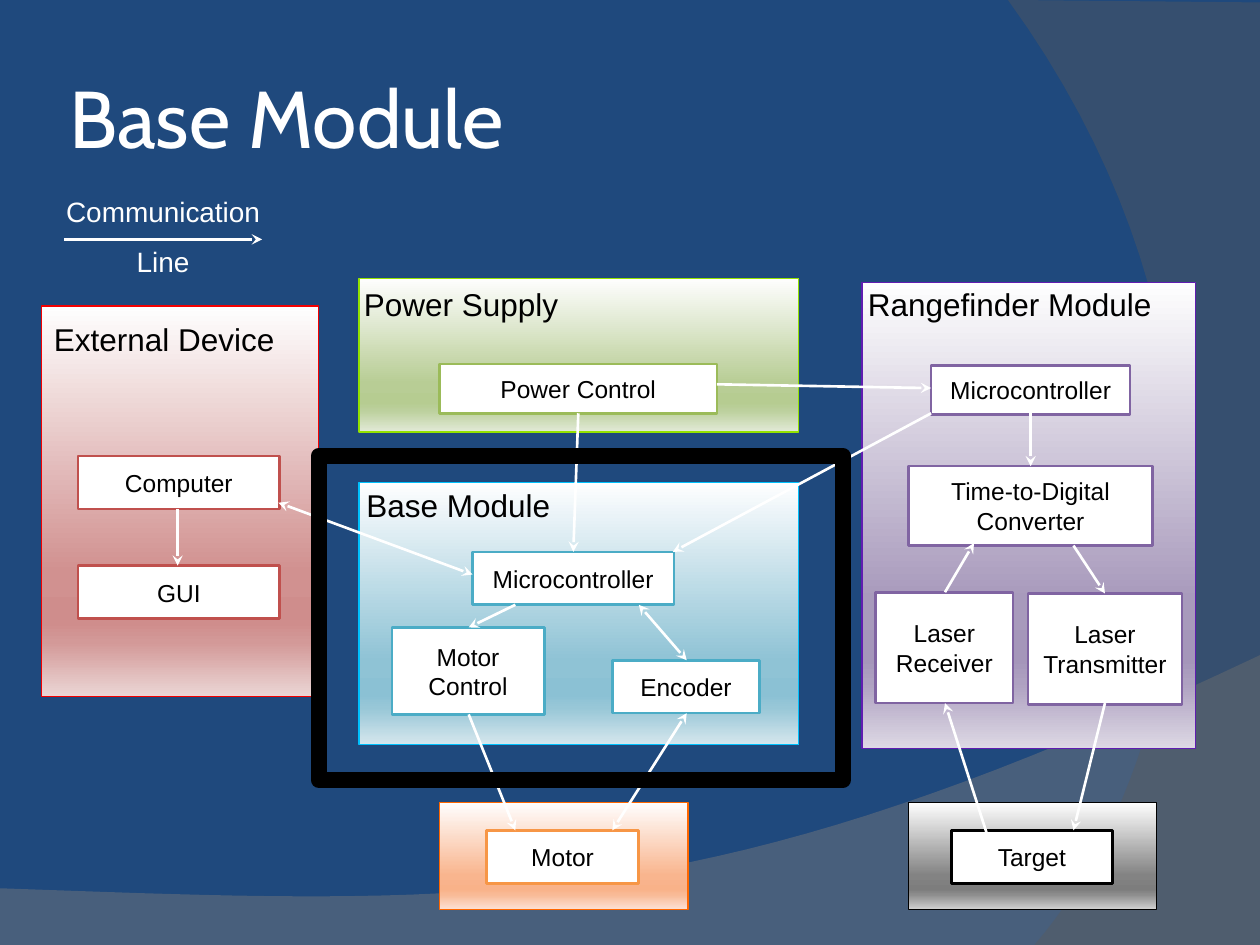
from lxml import etree
from pptx import Presentation
from pptx.dml.color import RGBColor
from pptx.enum import shapes, text
from pptx.oxml import ns
from pptx.util import Inches, Pt

COLORS = {
    "navy": "1F497D", "white": "FFFFFF", "black": "000000",
    "wave": "7B7B7B", "arc": "5A5A5A",
}
STOPS = (0, 68, 81, 86, 100)
# Per theme: panel line, box line, gradient colours at STOPS
THEMES = {
    "red": ("F30000", "C0504D", "FEFEFE D19190 CF8D8C D39998 EBD6D5"),
    "green": ("94E200", "9BBB59", "FEFEFE B8CD95 B6CC91 BCD09D E2EAD7"),
    "blue": ("00C1FD", "4BACC6", "FEFEFF 8FC3D5 8BC1D4 98C7D7 D5E6ED"),
    "purple": ("601DB1", "8064A2", "FEFEFE A89ABC A596BA AEA1C1 DDD8E4"),
    "orange": ("FF6700", "F79646", "FFFEFE F9B58E F9B289 F9BA96 FCE1D5"),
    "gray": ("000000", "000000", "FEFEFE 838383 7D7D7D 8D8D8D D2D2D2"),
}
# Panel: theme, box, title, title offset, parts (label, box within the panel)
PANELS = [
    ("purple", (6.84, 2.24, 2.65, 3.7), "Rangefinder Module", (-0.05, -0.03), [
        ("Microcontroller", (0.55, 0.66, 1.58, 0.39)),
        ("Time-to-Digital\nConverter", (0.37, 1.46, 1.94, 0.63)),
        ("Laser\nReceiver", (0.11, 2.46, 1.09, 0.88)),
        ("Laser\nTransmitter", (1.32, 2.47, 1.22, 0.88))]),
    ("orange", (3.49, 6.37, 1.97, 0.85), None, None,
     [("Motor", (0.37, 0.22, 1.21, 0.42))]),
    ("gray", (7.21, 6.37, 1.97, 0.85), None, None,
     [("Target", (0.34, 0.22, 1.28, 0.42))]),
    ("red", (0.33, 2.43, 2.2, 3.1), "External Device", (0, 0.06), [
        ("Computer", (0.29, 1.19, 1.6, 0.42)),
        ("GUI", (0.29, 2.06, 1.6, 0.42))]),
    ("green", (2.85, 2.21, 3.49, 1.22), "Power Supply", (-0.06, 0),
     [("Power Control", (0.64, 0.68, 2.2, 0.39))]),
    ("blue", (2.85, 3.83, 3.49, 2.08), "Base Module", (-0.04, -0.02), [
        ("Microcontroller", (0.9, 0.55, 1.6, 0.42)),
        ("Motor\nControl", (0.26, 1.15, 1.21, 0.69)),
        ("Encoder", (2.01, 1.41, 1.17, 0.42))]),
]
ONE_WAY = [
    (0.51, 1.9, 2.08, 1.9), (1.41, 4.04, 1.41, 4.49), (4.59, 3.28, 4.55, 4.38),
    (4.09, 4.8, 3.72, 4.98), (3.72, 5.67, 4.09, 6.59), (5.69, 3.05, 7.39, 3.08),
    (8.18, 3.25, 8.18, 3.7), (7.5, 4.7, 7.73, 4.31), (8.52, 4.33, 8.77, 4.71),
    (8.77, 5.58, 8.52, 6.59), (7.83, 6.61, 7.5, 5.58), (7.39, 3.28, 5.34, 4.38),
]
TWO_WAY = [(2.21, 3.99, 3.75, 4.56), (5.07, 4.8, 5.45, 5.24),
           (5.45, 5.66, 4.86, 6.59)]


def rgb(value):
    return RGBColor.from_string(COLORS.get(value, value))


def sub(parent, tag, **attrs):
    return etree.SubElement(parent, ns.qn(tag), attrs)


def write(shape, content, size=14, color="black", font="Arial", align="CENTER",
          anchor="TOP", inset=0.1, spacing=None):
    tf = shape.text_frame
    tf.word_wrap = True
    tf.vertical_anchor = getattr(text.MSO_ANCHOR, anchor)
    tf.margin_left = tf.margin_right = Inches(inset)
    tf.margin_top = tf.margin_bottom = Inches(0.05)
    for i, line in enumerate(content.split("\n")):
        p = tf.add_paragraph() if i else tf.paragraphs[0]
        p.alignment = getattr(text.PP_ALIGN, align)
        if spacing:
            p.line_spacing = spacing
        r = p.add_run()
        r.text = line
        r.font.size, r.font.name = Pt(size), font
        r.font.color.rgb = rgb(color)


def add_rect(s, box, line, width, fill=None):
    sp = s.shapes.add_shape(shapes.MSO_SHAPE.RECTANGLE, *map(Inches, box))
    sp.shadow.inherit = False
    if fill:
        sp.fill.solid()
        sp.fill.fore_color.rgb = rgb(fill)
    else:
        sp.fill.background()
    sp.line.color.rgb = rgb(line)
    sp.line.width = Pt(width)
    return sp


def add_label(s, box, content, **fmt):
    write(s.shapes.add_textbox(*map(Inches, box)), content, **fmt)


def bezier(a, b, c, d, steps=40):
    for i in range(1, steps + 1):
        t = i / steps
        u = 1 - t
        yield tuple(u**3 * a[k] + 3 * u * u * t * b[k] + 3 * u * t * t * c[k]
                    + t**3 * d[k] for k in (0, 1))


def add_swoosh(s, points, color, alpha):
    start, *rest = [tuple(map(Inches, pt)) for pt in points]
    fb = s.shapes.build_freeform(*start)
    fb.add_line_segments(rest, close=True)
    sp = fb.convert_to_shape()
    sp.shadow.inherit = False
    sp.fill.solid()
    sp.fill.fore_color.rgb = rgb(color)
    sp.line.fill.background()
    clr = sp.fill._xPr.find(".//" + ns.qn("a:srgbClr"))
    sub(clr, "a:alpha", val=str(alpha * 1000))


def add_background(s, w, h):
    s.background.fill.solid()
    s.background.fill.fore_color.rgb = rgb("navy")
    wave = bezier((w, 5.2), (5.59, 7.29), (3.91, 7.19), (0, 7.05))
    add_swoosh(s, [(0, h), (w, h), (w, 5.2), *wave], "wave", 45)
    arc = bezier((8.21, h), (9.35, 6.19), (10.18, 3), (8, 0))
    add_swoosh(s, [(w, 0.02), (w, h), (8.21, h), *arc], "arc", 40)


def add_title(s, box, content):
    title = s.shapes.title
    title.left, title.top, title.width, title.height = map(Inches, box)
    write(title, content, size=46, color="white", font="Cabin", align="LEFT",
          anchor="MIDDLE", inset=0.05)
    s.shapes._spTree.append(title._element)  # above the background


def add_panel(s, theme, box, title, offset, parts):
    line, part_line, gradient = THEMES[theme]
    x, y = box[:2]
    sp = add_rect(s, box, line, 0.75, "white")
    sp.fill.gradient()
    sp.fill.gradient_angle = 270
    gs_lst = sp._element.spPr.find(".//" + ns.qn("a:gsLst"))
    for gs in list(gs_lst):
        gs_lst.remove(gs)
    for pos, color in zip(STOPS, gradient.split()):
        sub(sub(gs_lst, "a:gs", pos=str(pos * 1000)), "a:srgbClr", val=color)
    for label, (dx, dy, w, h) in parts:
        part = add_rect(s, (x + dx, y + dy, w, h), part_line, 1.5, "white")
        write(part, label, anchor="MIDDLE", inset=0.05)
    if title:
        add_label(s, (x + offset[0], y + offset[1], 2.91, 0.4), title,
                  size=18, align="LEFT")


def add_arrow(s, ends, both=False):
    c = s.shapes.add_connector(shapes.MSO_CONNECTOR.STRAIGHT, *map(Inches, ends))
    c.line.color.rgb = rgb("white")
    c.line.width = Pt(1.5)
    ln = c.line._get_or_add_ln()
    if both:
        sub(ln, "a:headEnd", type="stealth")
    sub(ln, "a:tailEnd", type="stealth")
    sub(c._element.spPr, "a:effectLst")


def main():
    prs = Presentation()
    prs.slide_width, prs.slide_height = Inches(10), Inches(7.5)
    s = prs.slides.add_slide(prs.slide_layouts[5])

    add_background(s, 10, 7.5)
    add_title(s, (0.5, 0.3, 8.17, 1.25), "Base Module")

    # Block diagram
    for panel in PANELS:
        add_panel(s, *panel)

    # Legend text and communication lines
    add_label(s, (0.38, 1.36, 1.83, 0.89), "Communication Line", size=16,
              color="white", spacing=1.5)
    for ends in ONE_WAY:
        add_arrow(s, ends)
    for ends in TWO_WAY:
        add_arrow(s, ends, both=True)

    # Highlight frame
    add_rect(s, (2.53, 3.62, 4.16, 2.57), "black", 9.25)
    prs.save("out.pptx")


if __name__ == "__main__":
    main()
